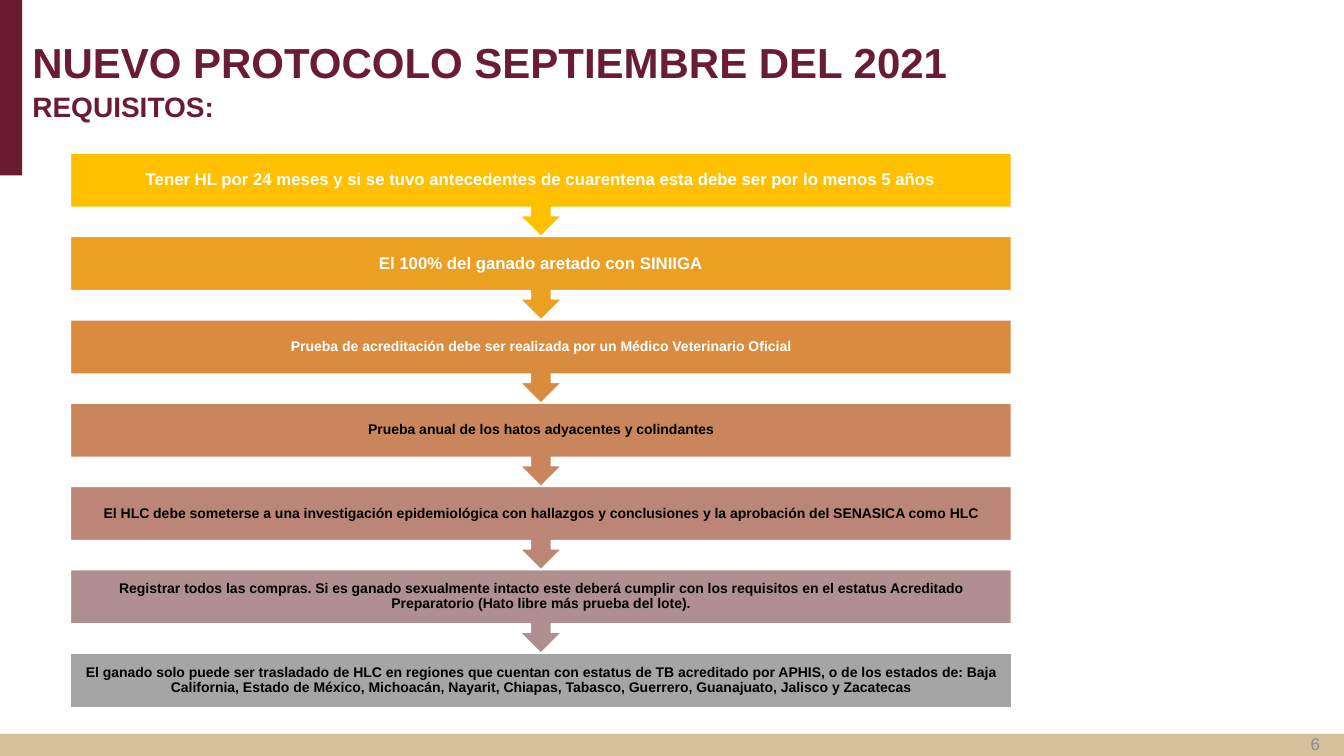
from dataclasses import dataclass

from pptx import Presentation
from pptx.dml.color import RGBColor
from pptx.enum.shapes import MSO_SHAPE as Shape
from pptx.enum.text import MSO_ANCHOR as Anchor, MSO_AUTO_SIZE as AutoSize, PP_ALIGN as Align
from pptx.oxml.ns import qn
from pptx.util import Inches, Pt

WINE = RGBColor(0x69, 0x1C, 0x32)
SAND = RGBColor(0xD4, 0xC1, 0x9C)
GRAY = RGBColor(0x8C, 0x8C, 0x8C)
WHITE = RGBColor(0xFF, 0xFF, 0xFF)
BLACK = RGBColor(0x00, 0x00, 0x00)
AMBER = RGBColor(0xFF, 0xC0, 0x00)
ORANGE = RGBColor(0xEB, 0xA0, 0x21)
COPPER = RGBColor(0xD9, 0x8C, 0x3F)
CLAY = RGBColor(0xC9, 0x85, 0x5C)
ROSE = RGBColor(0xBB, 0x86, 0x76)
MAUVE = RGBColor(0xAF, 0x8F, 0x8F)
SILVER = RGBColor(0xA5, 0xA5, 0xA5)

FLOW_LEFT, FLOW_WIDTH = 0.7, 9.33
FIRST_TOP, LAST_TOP = 1.52, 6.48
BOX_HEIGHT = 0.54


@dataclass
class Requirement:
    text: str
    fill: RGBColor
    color: RGBColor = BLACK
    size: int = 10


REQUIREMENTS = [
    Requirement("Tener HL por 24 meses y si se tuvo antecedentes de cuarentena esta debe ser "
                "por lo menos 5 años", AMBER, WHITE, 12),
    Requirement("El 100% del ganado aretado con SINIIGA", ORANGE, WHITE, 12),
    Requirement("Prueba de acreditación debe ser realizada por un Médico Veterinario Oficial",
                COPPER, WHITE),
    Requirement("Prueba anual de los hatos adyacentes y colindantes", CLAY),
    Requirement("El HLC debe someterse a una investigación epidemiológica con hallazgos y "
                "conclusiones y la aprobación del SENASICA como HLC", ROSE),
    Requirement("Registrar todos las compras. Si es ganado sexualmente intacto este deberá "
                "cumplir con los requisitos en el estatus Acreditado Preparatorio "
                "(Hato libre más prueba del lote).", MAUVE),
    Requirement("El ganado solo puede ser trasladado de HLC en regiones que cuentan con estatus "
                "de TB acreditado por APHIS, o de los estados de: Baja California, Estado de "
                "México, Michoacán, Nayarit, Chiapas, Tabasco, Guerrero, Guanajuato, Jalisco y "
                "Zacatecas", SILVER),
]


def place(box, left: float, top: float, width: float, height: float) -> None:
    box.left, box.top = Inches(left), Inches(top)
    box.width, box.height = Inches(width), Inches(height)


def write(box, text: str, *, size: int, color: RGBColor, bold: bool = True,
          align: Align = Align.LEFT, anchor: Anchor = Anchor.MIDDLE, spacing: float = 0.9,
          side: float = 0.1, top: float = 0.05, bottom: float = 0.05) -> None:
    frame = box.text_frame
    frame.word_wrap = True
    frame.auto_size = AutoSize.NONE
    frame.vertical_anchor = anchor
    frame.margin_left = frame.margin_right = Inches(side)
    frame.margin_top, frame.margin_bottom = Inches(top), Inches(bottom)
    para = frame.paragraphs[0]
    para.alignment = align
    para.line_spacing = spacing
    para.space_before = Pt(0)
    span = para.add_run()
    span.text = text
    span.font.name = "Arial"
    span.font.size = Pt(size)
    span.font.bold = bold
    span.font.color.rgb = color


def add_block(page, kind: Shape, left: float, top: float, width: float, height: float,
              fill: RGBColor):
    block = page.shapes.add_shape(kind, Inches(left), Inches(top), Inches(width), Inches(height))
    block.shadow.inherit = False
    block.fill.solid()
    block.fill.fore_color.rgb = fill
    block.line.fill.background()
    return block


def add_flow(page, requirements: list[Requirement]) -> None:
    last = len(requirements) - 1
    step = (LAST_TOP - FIRST_TOP) / last
    # Bottom step first, so that each arrow tip lies over the next box
    for index, item in reversed(list(enumerate(requirements))):
        is_last = index == last
        kind = Shape.RECTANGLE if is_last else Shape.DOWN_ARROW_CALLOUT
        height = BOX_HEIGHT if is_last else step
        block = add_block(page, kind, FLOW_LEFT, FIRST_TOP + index * step, FLOW_WIDTH, height,
                          item.fill)
        block.line.color.rgb = WHITE
        block.line.width = Pt(1)
        inset = 0.09 if item.size == 12 else 0.08
        write(block, item.text, size=item.size, color=item.color, align=Align.CENTER,
              side=inset, top=inset, bottom=inset)


def main() -> None:
    deck = Presentation()
    deck.slide_width, deck.slide_height = Inches(13.33), Inches(7.5)
    page = deck.slides.add_slide(deck.slide_layouts[1])

    # Page frame and number
    add_block(page, Shape.RECTANGLE, 0, 7.28, 13.33, 0.22, SAND)
    add_block(page, Shape.RECTANGLE, 0, 0, 0.22, 1.74, WINE)
    number = page.shapes.add_textbox(Inches(10.19), Inches(7.18), Inches(3), Inches(0.4))
    write(number, "6", size=12, color=GRAY, bold=False, align=Align.RIGHT, spacing=1.0)

    # Headings
    title = page.shapes.title
    place(title, 0.22, 0.28, 10.08, 1.14)
    write(title, "NUEVO PROTOCOLO SEPTIEMBRE DEL 2021", size=30, color=WINE,
          anchor=Anchor.TOP, top=0.14)
    body = page.placeholders[1]
    place(body, 0.22, 0.88, 12.08, 0.64)
    properties = body.text_frame.paragraphs[0]._p.get_or_add_pPr()
    properties.set("marL", "0")
    properties.set("indent", "0")
    properties.append(properties.makeelement(qn("a:buNone"), {}))
    write(body, "REQUISITOS:", size=20, color=WINE, anchor=Anchor.TOP)

    # Requirement flow
    add_flow(page, REQUIREMENTS)
    deck.save("out.pptx")


if __name__ == "__main__":
    main()
